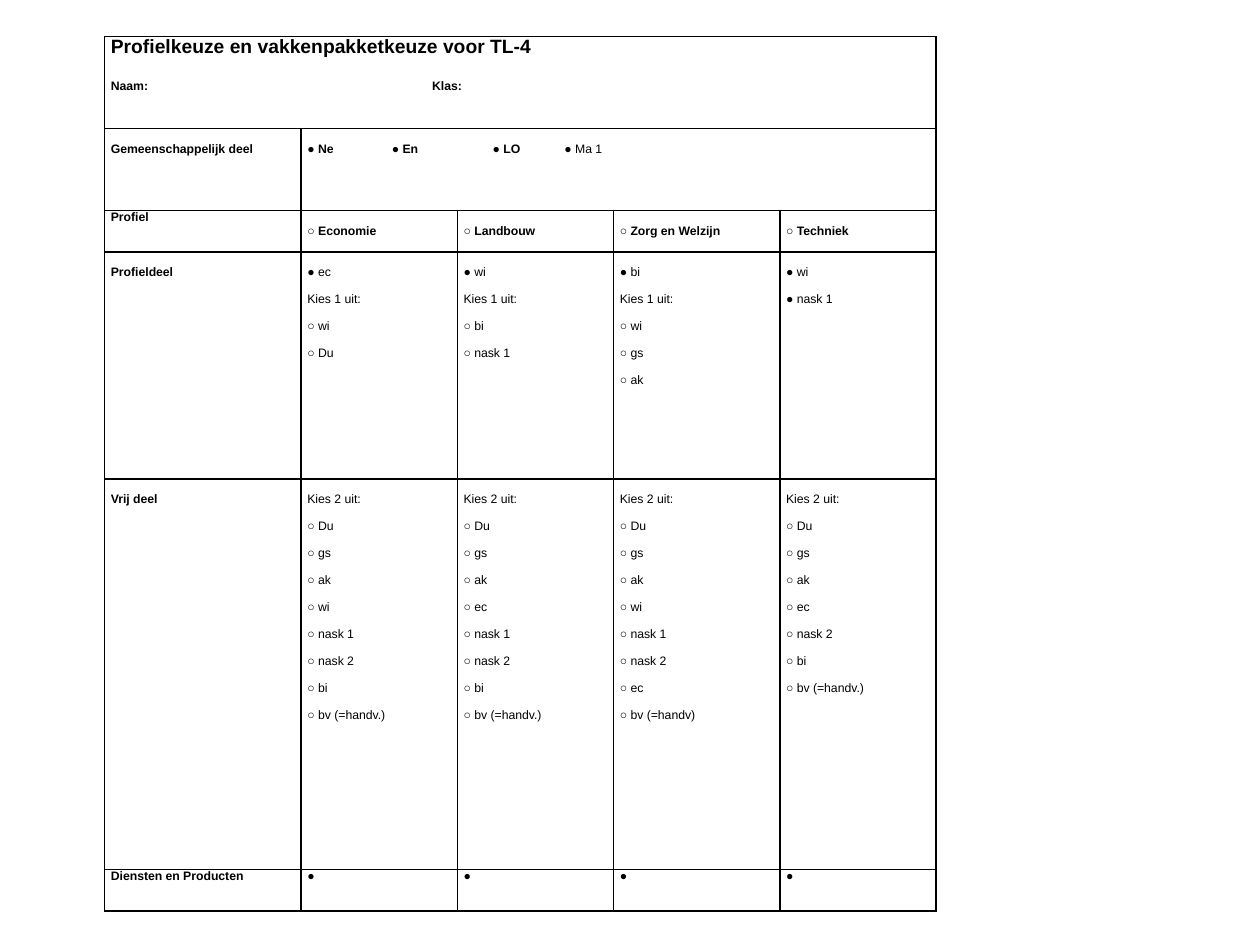
from lxml import etree
from pptx import Presentation
from pptx.dml.color import RGBColor
from pptx.oxml import parse_xml
from pptx.oxml.ns import nsdecls, qn
from pptx.util import Inches, Pt

COLS = [1.56, 1.24, 1.24, 1.32, 1.24]
ROWS = [0.73, 0.65, 0.33, 1.8, 3.1, 0.33]
LEFT, TOP = 0.83, 0.29
LOW, HIGH = 0.11, 0  # top inset: one line down, or flush with the border
BLACK = "000000"


def add_run(p, text, size=7, bold=False):
    r = p.add_run()
    r.text = text
    font = {"name": "Arial", "size": Pt(size), "bold": bold}
    for key, value in font.items():
        setattr(r.font, key, value)
    r.font.color.rgb = RGBColor.from_string(BLACK)


def add_tabs(p, stops):
    tabs = etree.SubElement(p._p.get_or_add_pPr(), qn("a:tabLst"))
    for stop in stops:
        etree.SubElement(tabs, qn("a:tab"), pos=str(Inches(stop)), algn="l")


prs = Presentation()
prs.slide_width, prs.slide_height = Inches(10), Inches(7.5)
s = prs.slides.add_slide(prs.slide_layouts[6])

# Table grid
table = s.shapes.add_table(len(ROWS), len(COLS), Inches(LEFT), Inches(TOP),
                           Inches(sum(COLS)), Inches(sum(ROWS))).table
table.first_row = table.horz_banding = False
for col, width in zip(table.columns, COLS):
    col.width = Inches(width)
for row, height in zip(table.rows, ROWS):
    row.height = Inches(height)

# Borders, margins and fill
for cell in table.iter_cells():
    cell.margin_left = cell.margin_right = Inches(0.05)
    cell.margin_top = cell.margin_bottom = 0
    tcPr = cell._tc.get_or_add_tcPr()
    for side in ("lnL", "lnR", "lnT", "lnB"):
        tcPr.append(parse_xml(
            f'<a:{side} {nsdecls("a")} w="{Pt(1)}"><a:solidFill>'
            f'<a:srgbClr val="{BLACK}"/></a:solidFill></a:{side}>'))
    cell.fill.background()
table.cell(0, 0).merge(table.cell(0, 4))
table.cell(1, 1).merge(table.cell(1, 4))

# Title with name and class
tf = table.cell(0, 0).text_frame
add_run(tf.paragraphs[0], "Profielkeuze en vakkenpakketkeuze voor TL-4", 11, True)
p = tf.add_paragraph()
p.space_before = Pt(12.5)
add_tabs(p, [2.55])
add_run(p, "Naam:\tKlas:", bold=True)

# Common subjects
cell = table.cell(1, 1)
cell.margin_top = Inches(LOW)
p = cell.text_frame.paragraphs[0]
add_tabs(p, [0.67, 1.47, 2.04])
add_run(p, "● Ne\t● En\t● LO\t", bold=True)
add_run(p, "● Ma 1")

# Row labels: text and top inset
labels = [("Gemeenschappelijk deel", LOW), ("Profiel", HIGH), ("Profieldeel", LOW),
          ("Vrij deel", LOW), ("Diensten en Producten", HIGH)]
for i, (label, inset) in enumerate(labels, 1):
    cell = table.cell(i, 0)
    cell.margin_top = Inches(inset)
    add_run(cell.text_frame.paragraphs[0], label, bold=True)

# Choices per profile: row, top inset, bold, one list of lines per column
choices = [
    (2, LOW, True, [["○ Economie"], ["○ Landbouw"], ["○ Zorg en Welzijn"], ["○ Techniek"]]),
    (3, LOW, False, [
        ["● ec", "Kies 1 uit:", "○ wi", "○ Du"],
        ["● wi", "Kies 1 uit:", "○ bi", "○ nask 1"],
        ["● bi", "Kies 1 uit:", "○ wi", "○ gs", "○ ak"],
        ["● wi", "● nask 1"]]),
    (4, LOW, False, [
        ["Kies 2 uit:", "○ Du", "○ gs", "○ ak"] + rest for rest in (
            ["○ wi", "○ nask 1", "○ nask 2", "○ bi", "○ bv (=handv.)"],
            ["○ ec", "○ nask 1", "○ nask 2", "○ bi", "○ bv (=handv.)"],
            ["○ wi", "○ nask 1", "○ nask 2", "○ ec", "○ bv (=handv)"],
            ["○ ec", "○ nask 2", "○ bi", "○ bv (=handv.)"])]),
    (5, HIGH, False, [["●"]] * 4),
]
for row, inset, bold, columns in choices:
    for col, lines in enumerate(columns, 1):
        cell = table.cell(row, col)
        cell.margin_top = Inches(inset)
        tf = cell.text_frame
        for n, line in enumerate(lines):
            p = tf.add_paragraph() if n else tf.paragraphs[0]
            if n:
                p.space_before = Pt(7.6)
            add_run(p, line, bold=bold)

prs.save("out.pptx")
